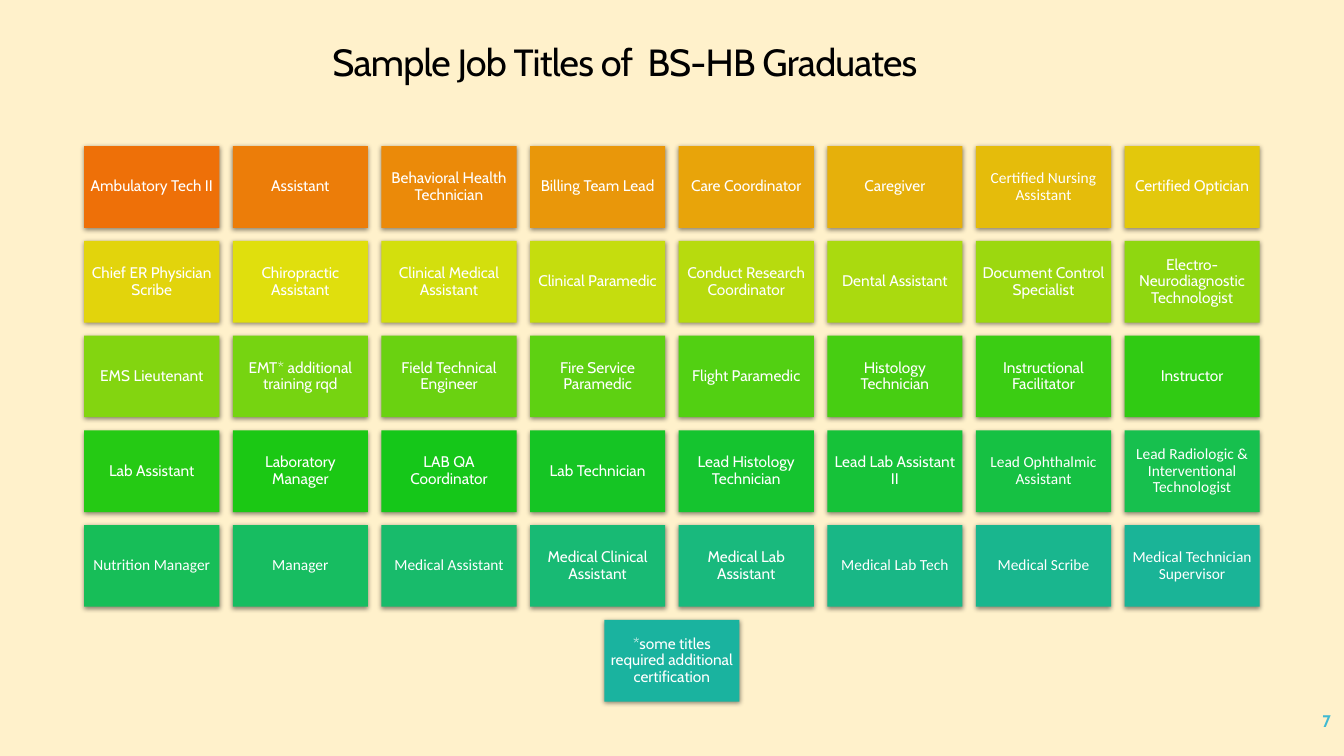
from colorsys import hls_to_rgb, rgb_to_hls

from lxml.etree import SubElement
from pptx import Presentation
from pptx.dml.color import RGBColor
from pptx.enum.shapes import MSO_SHAPE
from pptx.enum.text import MSO_ANCHOR, PP_ALIGN
from pptx.oxml.ns import qn
from pptx.util import Inches, Pt

TITLE = "Sample Job Titles of  BS-HB Graduates"
PAGE_NUMBER = "7"
JOB_ROWS = [
    ["Ambulatory Tech II", "Assistant", "Behavioral Health Technician", "Billing Team Lead",
     "Care Coordinator", "Caregiver", "Certified Nursing Assistant", "Certified Optician"],
    ["Chief ER Physician Scribe", "Chiropractic Assistant", "Clinical Medical Assistant",
     "Clinical Paramedic", "Conduct Research Coordinator", "Dental Assistant",
     "Document Control Specialist", "Electro-Neurodiagnostic Technologist"],
    ["EMS Lieutenant", "EMT* additional training rqd", "Field Technical Engineer",
     "Fire Service Paramedic", "Flight Paramedic", "Histology Technician",
     "Instructional Facilitator", "Instructor"],
    ["Lab Assistant", "Laboratory Manager", "LAB QA Coordinator", "Lab Technician",
     "Lead Histology Technician", "Lead Lab Assistant II", "Lead Ophthalmic Assistant",
     "Lead Radiologic & Interventional Technologist"],
    ["Nutrition Manager", "Manager", "Medical Assistant", "Medical Clinical Assistant",
     "Medical Lab Assistant", "Medical Lab Tech", "Medical Scribe",
     "Medical Technician Supervisor"],
    ["*some titles required additional certification"],
]
CALIBRI_JOBS = {
    "Certified Nursing Assistant", "Lead Ophthalmic Assistant",
    "Lead Radiologic & Interventional Technologist", "Nutrition Manager", "Manager",
    "Medical Assistant", "Medical Lab Tech", "Medical Scribe", "Medical Technician Supervisor",
}

CREAM = RGBColor(0xFF, 0xF1, 0xCB)
BLACK = RGBColor(0x00, 0x00, 0x00)
WHITE = RGBColor(0xFF, 0xFF, 0xFF)
SKY = RGBColor(0x40, 0xBA, 0xD2)
ORANGE = RGBColor(0xEE, 0x70, 0x08)
TEAL = RGBColor(0x1A, 0xB3, 0x9F)

SLIDE_WIDTH, SLIDE_HEIGHT = 13.33, 7.5
TILE_WIDTH, TILE_HEIGHT = 1.34, 0.81
GAP = TILE_WIDTH / 10
GRID_TOP = 1.45
ROW_STEP = 0.94


def blend(start, end, share):
    first, last = (rgb_to_hls(*(channel / 255 for channel in color)) for color in (start, end))
    mixed = [a + (b - a) * share for a, b in zip(first, last)]
    return RGBColor(*(round(channel * 255) for channel in hls_to_rgb(*mixed)))


def write_text(shape, text, *, size, color, font="Cabin", bold=False,
               align=PP_ALIGN.CENTER, line_spacing=0.9, inset=None, tracking=None):
    frame = shape.text_frame
    frame.word_wrap = True
    frame.vertical_anchor = MSO_ANCHOR.MIDDLE
    if inset is not None:
        frame.margin_left = frame.margin_right = Inches(inset)
        frame.margin_top = frame.margin_bottom = Inches(inset)
    paragraph = frame.paragraphs[0]
    paragraph.alignment = align
    paragraph.line_spacing = line_spacing
    run = paragraph.add_run()
    run.text = text
    run.font.name = font
    run.font.size = Pt(size)
    run.font.bold = bold
    run.font.color.rgb = color
    if tracking is not None:
        run.font._element.set("spc", str(round(tracking * 100)))


def add_shadow(shape):
    shape.shadow.inherit = False
    effects = shape._element.spPr.find(qn("a:effectLst"))
    shadow = SubElement(effects, qn("a:outerShdw"), blurRad=str(Pt(3.5)), dist=str(Pt(1.1)),
                        dir="5400000", algn="ctr", rotWithShape="0")
    color = SubElement(shadow, qn("a:srgbClr"), val=str(BLACK))
    SubElement(color, qn("a:alpha"), val="45000")


def add_tile(slide, text, left, top, color):
    tile = slide.shapes.add_shape(MSO_SHAPE.RECTANGLE, Inches(left), Inches(top),
                                  Inches(TILE_WIDTH), Inches(TILE_HEIGHT))
    tile.fill.solid()
    tile.fill.fore_color.rgb = color
    tile.line.fill.background()
    add_shadow(tile)
    write_text(tile, text, size=11, color=WHITE, inset=0.05,
               font="Calibri" if text in CALIBRI_JOBS else "Cabin")


def add_job_grid(slide):
    last_index = sum(len(jobs) for jobs in JOB_ROWS) - 1
    index = 0
    for row, jobs in enumerate(JOB_ROWS):
        row_width = len(jobs) * (TILE_WIDTH + GAP) - GAP
        row_left = (SLIDE_WIDTH - row_width) / 2
        for column, job in enumerate(jobs):
            add_tile(slide, job, row_left + column * (TILE_WIDTH + GAP),
                     GRID_TOP + row * ROW_STEP, blend(ORANGE, TEAL, index / last_index))
            index += 1


def main():
    presentation = Presentation()
    presentation.slide_width = Inches(SLIDE_WIDTH)
    presentation.slide_height = Inches(SLIDE_HEIGHT)
    slide = presentation.slides.add_slide(presentation.slide_layouts[6])
    slide.background.fill.solid()
    slide.background.fill.fore_color.rgb = CREAM

    number = slide.shapes.add_textbox(Inches(11.63), Inches(6.95), Inches(1.67), Inches(0.4))
    write_text(number, PAGE_NUMBER, size=12, color=SKY, bold=True,
               align=PP_ALIGN.RIGHT, line_spacing=1.0)
    title = slide.shapes.add_textbox(0, Inches(0.4), Inches(12.39), Inches(0.47))
    write_text(title, TITLE, size=27, color=BLACK, tracking=-0.6)
    add_job_grid(slide)
    presentation.save("out.pptx")


if __name__ == "__main__":
    main()
